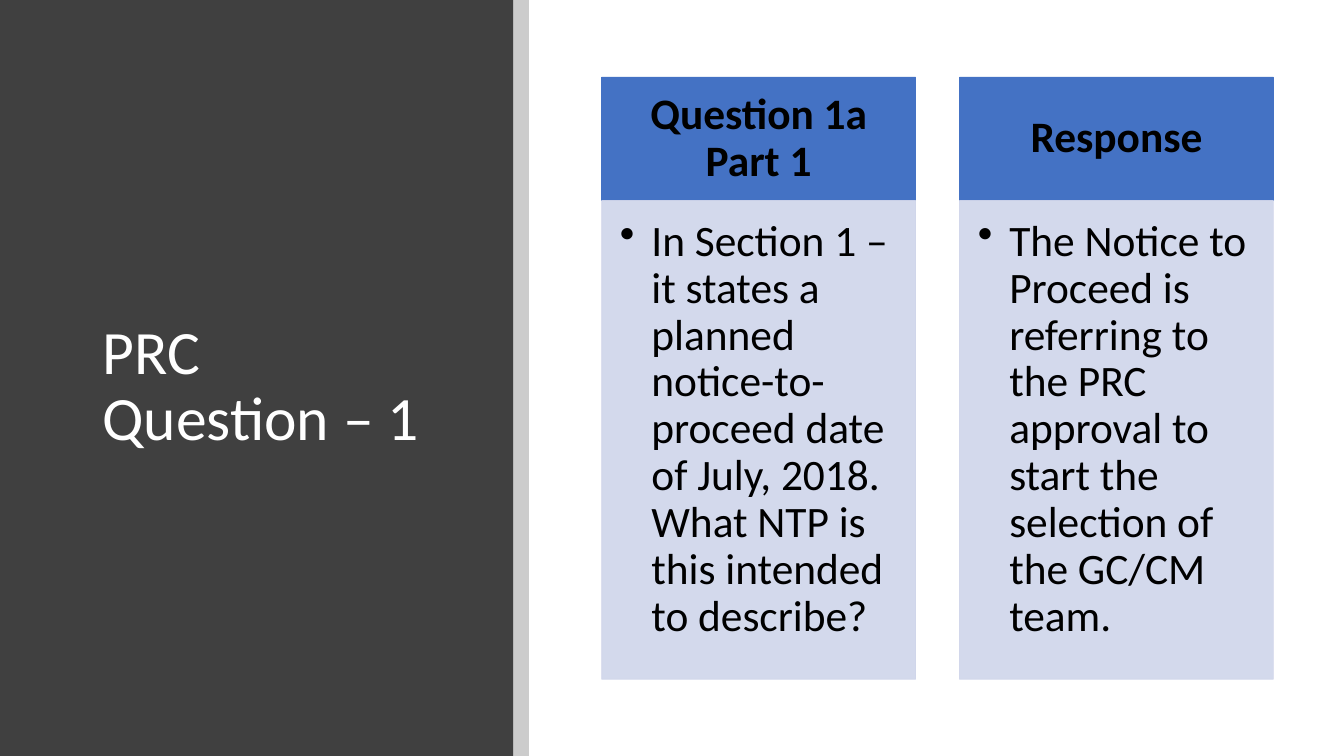
import pptx
import pptx.dml.color
import pptx.enum.shapes
import pptx.enum.text
import pptx.oxml
import pptx.oxml.ns
import pptx.util
from pptx.util import Pt

RGBColor = pptx.dml.color.RGBColor
ANCHOR = pptx.enum.text.MSO_ANCHOR
ALIGN = pptx.enum.text.PP_ALIGN

BLACK = RGBColor(0x00, 0x00, 0x00)
WHITE = RGBColor(0xFF, 0xFF, 0xFF)
CHARCOAL = RGBColor(0x40, 0x40, 0x40)
BLUE = RGBColor(0x44, 0x72, 0xC4)
PALE_BLUE = RGBColor(0xCF, 0xD5, 0xEA)

COLUMNS = [
    ("Question 1a Part 1",
     "In Section 1 – it states a planned notice-to-proceed date of July, 2018. "
     "What NTP is this intended to describe?"),
    ("Response",
     "The Notice to Proceed is referring to the PRC approval to start the "
     "selection of the GC/CM team."),
]
COLUMN_LEFT, COLUMN_STEP, COLUMN_WIDTH = 429.8, 255.6, 224.2
HEADER_TOP, HEADER_HEIGHT, BODY_HEIGHT = 54.9, 88.3, 342
BULLET_INDENT = 22.5


def add_rectangle(left, top, width, height, color, opacity=100, outlined=False):
    """Add a flat rectangle; opacity is a percentage for fill and outline."""
    box = page.shapes.add_shape(pptx.enum.shapes.MSO_SHAPE.RECTANGLE,
                                Pt(left), Pt(top), Pt(width), Pt(height))
    box.shadow.inherit = False
    box.fill.solid()
    box.fill.fore_color.rgb = color
    if outlined:
        box.line.color.rgb = color
        box.line.width = Pt(0.5)
    else:
        box.line.fill.background()
    if opacity < 100:
        for rgb in box.element.spPr.iter(pptx.oxml.ns.qn("a:srgbClr")):
            alpha = pptx.oxml.parse_xml(
                f'<a:alpha {pptx.oxml.ns.nsdecls("a")} val="{opacity * 1000}"/>')
            rgb.append(alpha)
    return box


def write_text(box, text, size, color, align, anchor, insets):
    """Fill a shape with one Calibri paragraph; insets run left, top, right, bottom."""
    frame = box.text_frame
    frame.text = text
    frame.word_wrap = True
    frame.auto_size = pptx.enum.text.MSO_AUTO_SIZE.NONE
    frame.vertical_anchor = anchor
    frame.margin_left, frame.margin_top, frame.margin_right, frame.margin_bottom = map(Pt, insets)
    para = frame.paragraphs[0]
    para.alignment = align
    para.line_spacing = 0.9
    para.font.name = "Calibri"
    para.font.size = Pt(size)
    para.font.color.rgb = color
    return para


deck = pptx.Presentation()
deck.slide_width, deck.slide_height = Pt(960), Pt(540)
page = deck.slides.add_slide(deck.slide_layouts[5])

# Dark panel with its edge strip, and the title on top
panel = add_rectangle(0, 0, 366.5, 540, CHARCOAL)
add_rectangle(366.5, 0, 11.3, 540, BLACK, opacity=20)
title = page.shapes.title
title.left, title.top, title.width, title.height = Pt(66), Pt(64), Pt(263), Pt(425.5)
write_text(title, "PRC \vQuestion – 1", 44, WHITE, ALIGN.LEFT, ANCHOR.MIDDLE,
           (7.2, 3.6, 7.2, 3.6))
title.element.addprevious(panel.element)

# Question and response columns
for index, (heading, answer) in enumerate(COLUMNS):
    left = COLUMN_LEFT + index * COLUMN_STEP
    header = add_rectangle(left, HEADER_TOP, COLUMN_WIDTH, HEADER_HEIGHT, BLUE, outlined=True)
    para = write_text(header, heading, 31, BLACK, ALIGN.CENTER, ANCHOR.MIDDLE,
                      (17.3, 10, 17.3, 10))
    para.font.bold = True

    body = add_rectangle(left, HEADER_TOP + HEADER_HEIGHT, COLUMN_WIDTH, BODY_HEIGHT,
                         PALE_BLUE, opacity=90, outlined=True)
    para = write_text(body, answer, 31, BLACK, ALIGN.LEFT, ANCHOR.TOP, (13, 13, 17.3, 19.5))
    properties = para._p.get_or_add_pPr()
    properties.set("marL", str(Pt(BULLET_INDENT)))
    properties.set("indent", str(-Pt(BULLET_INDENT)))
    bullet = pptx.oxml.parse_xml(f'<a:buChar {pptx.oxml.ns.nsdecls("a")} char="•"/>')
    properties.find(pptx.oxml.ns.qn("a:defRPr")).addprevious(bullet)

deck.save("out.pptx")
